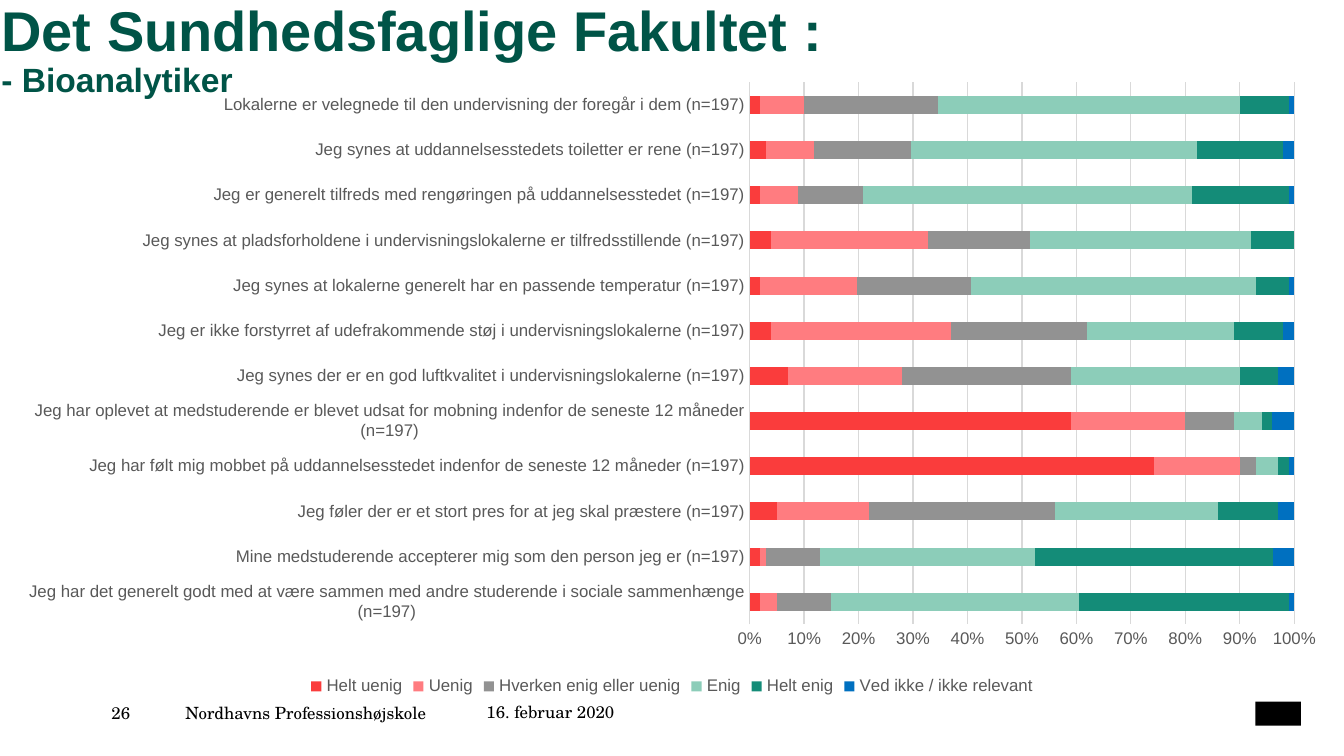
from typing import Any, NamedTuple

from pptx import Presentation
from pptx.chart.data import CategoryChartData as Data
from pptx.dml.color import RGBColor
from pptx.enum.chart import XL_CHART_TYPE as Kind
from pptx.enum.chart import XL_LEGEND_POSITION as Side
from pptx.enum.chart import XL_TICK_MARK as Tick
from pptx.enum.shapes import MSO_SHAPE as Form
from pptx.enum.text import MSO_ANCHOR as Anchor
from pptx.enum.text import PP_ALIGN as Align
from pptx.oxml import parse_xml
from pptx.oxml.ns import nsdecls, qn
from pptx.util import Inches, Pt

BLACK = RGBColor(0x00, 0x00, 0x00)
GREEN = RGBColor(0x00, 0x54, 0x47)
GREY = RGBColor(0x59, 0x59, 0x59)
PALE = RGBColor(0xD9, 0xD9, 0xD9)

WIDE = Inches(10)
HIGH = WIDE * 9 // 16

SANS = "Arial"
SERIF = "TeX Gyre Schola"
BASE = {"name": SANS, "size": Pt(10)}
SMALL = {"name": SANS, "size": Pt(9), "bold": False}
FOOT = {"name": SERIF, "size": Pt(9)}
HEAD = {"name": SANS, "size": Pt(30), "bold": True}
SUB = HEAD | {"size": Pt(18)}
FRAME = {"margin_left": 0, "margin_top": 0, "margin_right": 0,
         "margin_bottom": 0, "word_wrap": True, "vertical_anchor": Anchor.TOP}
PLOT = {"x": 0.558, "y": 0.02, "w": 0.406, "h": 0.858}


class Note(NamedTuple):
    text: str
    left: float
    top: float
    width: float


class Band(NamedTuple):
    name: str
    color: RGBColor
    vals: list[int | None]


NOTES = [
    Note("26", 0.83, 5.23, 0.46),
    Note("Nordhavns Professionshøjskole", 1.38, 5.23, 2.08),
    Note("16. februar 2020", 3.62, 5.22, 2.8),
]

ITEMS = [
    "Jeg har det generelt godt med at være sammen med andre studerende i sociale sammenhænge",
    "Mine medstuderende accepterer mig som den person jeg er",
    "Jeg føler der er et stort pres for at jeg skal præstere",
    "Jeg har følt mig mobbet på uddannelsesstedet indenfor de seneste 12 måneder",
    "Jeg har oplevet at medstuderende er blevet udsat for mobning indenfor de seneste 12 måneder",
    "Jeg synes der er en god luftkvalitet i undervisningslokalerne",
    "Jeg er ikke forstyrret af udefrakommende støj i undervisningslokalerne",
    "Jeg synes at lokalerne generelt har en passende temperatur",
    "Jeg synes at pladsforholdene i undervisningslokalerne er tilfredsstillende",
    "Jeg er generelt tilfreds med rengøringen på uddannelsesstedet",
    "Jeg synes at uddannelsesstedets toiletter er rene",
    "Lokalerne er velegnede til den undervisning der foregår i dem",
]

BANDS = [
    Band("Helt uenig", RGBColor(0xFA, 0x3C, 0x3C),
         [2, 2, 5, 75, 59, 7, 4, 2, 4, 2, 3, 2]),
    Band("Uenig", RGBColor(0xFF, 0x7C, 0x80),
         [3, 1, 17, 16, 21, 21, 33, 18, 29, 7, 9, 8]),
    Band("Hverken enig eller uenig", RGBColor(0x92, 0x92, 0x92),
         [10, 10, 34, 3, 9, 31, 25, 21, 19, 12, 18, 25]),
    Band("Enig", RGBColor(0x8C, 0xCD, 0xB9),
         [46, 40, 30, 4, 5, 31, 27, 53, 41, 61, 53, 56]),
    Band("Helt enig", RGBColor(0x14, 0x8C, 0x78),
         [39, 44, 11, 2, 2, 7, 9, 6, 8, 18, 16, 9]),
    Band("Ved ikke / ikke relevant", RGBColor(0x00, 0x70, 0xC0),
         [1, 4, 3, 1, 4, 3, 2, 1, None, 1, 2, 1]),
]


def apply(item: Any, vals: dict[str, Any]) -> None:
    for key, val in vals.items():
        setattr(item, key, val)


def style(font: Any, vals: dict[str, Any], color: RGBColor) -> None:
    apply(font, vals)
    font.color.rgb = color


def place(left: float, top: float, width: float, height: float) -> dict[str, Any]:
    return {"left": Inches(left), "top": Inches(top),
            "width": Inches(width), "height": Inches(height)}


def draw_title(slide: Any) -> None:
    title = slide.shapes.title
    apply(title, place(0.01, 0.02, 8.19, 1.08))
    apply(title.text_frame, FRAME)
    para = title.text_frame.paragraphs[0]
    apply(para, {"alignment": Align.LEFT, "line_spacing": 0.9})
    for text, vals in (("Det Sundhedsfaglige Fakultet :", HEAD),
                       ("- Bioanalytiker", SUB)):
        if para.runs:
            para.add_line_break()
        run = para.add_run()
        run.text = text
        style(run.font, vals, GREEN)


def draw_note(slide: Any, note: Note) -> None:
    box = slide.shapes.add_textbox(
        **place(note.left, note.top, note.width, 0.15))
    apply(box.text_frame, FRAME)
    run = box.text_frame.paragraphs[0].add_run()
    run.text = note.text
    style(run.font, FOOT, BLACK)


def draw_mark(slide: Any) -> None:
    mark = slide.shapes.add_shape(Form.RECTANGLE, **place(9.34, 5.22, 0.34, 0.18))
    mark.shadow.inherit = False
    mark.fill.solid()
    mark.fill.fore_color.rgb = BLACK
    mark.line.fill.background()


def fix_plot(chart: Any) -> None:
    area = chart._chartSpace.find(f".//{qn('c:plotArea')}")
    for old in area.findall(qn("c:layout")):
        area.remove(old)
    modes = '<c:xMode val="edge"/><c:yMode val="edge"/>'
    sizes = "".join(f'<c:{key} val="{val}"/>' for key, val in PLOT.items())
    area.insert(0, parse_xml(
        f'<c:layout {nsdecls("c")}><c:manualLayout><c:layoutTarget val="inner"/>'
        f"{modes}{sizes}</c:manualLayout></c:layout>"))


def draw_chart(slide: Any) -> None:
    data = Data()
    data.categories = [f"{item} (n=197)" for item in ITEMS]
    for band in BANDS:
        data.add_series(band.name, band.vals)
    spot = place(0.01, 0.52, 9.98, 4.7)
    chart = slide.shapes.add_chart(
        Kind.BAR_STACKED_100, spot["left"], spot["top"],
        spot["width"], spot["height"], data).chart
    apply(chart, {"has_title": False, "has_legend": True})
    style(chart.font, BASE, BLACK)
    apply(chart.legend, {"position": Side.BOTTOM, "include_in_layout": False})
    style(chart.legend.font, SMALL, GREY)

    plot = chart.plots[0]
    apply(plot, {"gap_width": 150, "overlap": 100, "vary_by_categories": False})
    for row, band in zip(plot.series, BANDS):
        row.format.fill.solid()
        row.format.fill.fore_color.rgb = band.color

    cat, val = chart.category_axis, chart.value_axis
    for axis in (cat, val):
        apply(axis, {"major_tick_mark": Tick.NONE, "minor_tick_mark": Tick.NONE})
        style(axis.tick_labels.font, SMALL, GREY)
    cat.has_major_gridlines = False
    apply(val, {"has_major_gridlines": True, "minimum_scale": 0,
                "maximum_scale": 1, "major_unit": 0.1})
    apply(val.tick_labels, {"number_format": "0%", "number_format_is_linked": False})
    val.format.line.fill.background()
    for line in (cat.format.line, val.major_gridlines.format.line):
        line.width = Pt(0.75)
        line.color.rgb = PALE
    fix_plot(chart)


def main() -> None:
    deck = Presentation()
    apply(deck, {"slide_width": WIDE, "slide_height": HIGH})
    slide = deck.slides.add_slide(deck.slide_layouts[5])
    draw_title(slide)
    for note in NOTES:
        draw_note(slide, note)
    draw_mark(slide)
    draw_chart(slide)
    deck.save("out.pptx")


if __name__ == "__main__":
    main()
